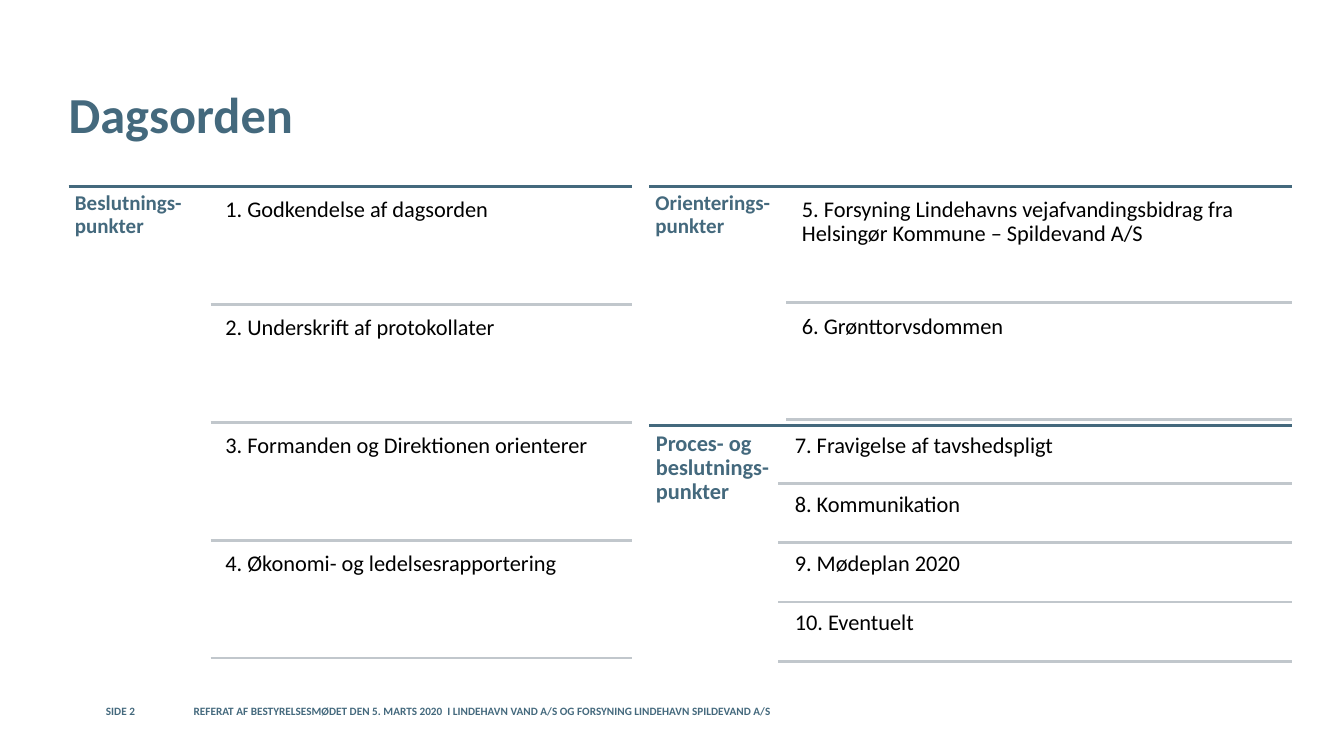
from dataclasses import dataclass

from lxml.etree import SubElement
from pptx import Presentation
from pptx.dml.color import RGBColor
from pptx.enum.text import MSO_ANCHOR
from pptx.oxml.ns import qn
from pptx.slide import Slide
from pptx.util import Cm, Pt


@dataclass(frozen=True)
class Theme:
    font: str = "Calibri"
    accent: RGBColor = RGBColor(0x44, 0x69, 0x7D)
    rule: RGBColor = RGBColor(0xC1, 0xC7, 0xCC)
    body: RGBColor = RGBColor(0, 0, 0)
    title_size: int = 36
    item_size: int = 16
    label_size: int = 15
    footer_size: int = 8
    line_width: int = 2


THEME = Theme()


@dataclass(frozen=True)
class Box:
    left: float
    top: float
    width: float
    height: float


@dataclass(frozen=True)
class Section:
    label: str
    label_box: Box
    label_size: int
    label_inset: float
    right: float
    rule_left: float
    item_left: float
    item_top: float
    item_height: float
    rule_offset: float
    step: float
    items: tuple[str, ...]


SECTIONS = (
    Section("Beslutnings-punkter", Box(1.73, 4.7, 3.58, 12.04), THEME.label_size, 0.16,
            15.93, 5.31, 5.51, 4.83, 2.82, 2.84, 2.97,
            ("1. Godkendelse af dagsorden", "2. Underskrift af protokollater",
             "3. Formanden og Direktionen orienterer",
             "4. Økonomi- og ledelsesrapportering")),
    Section("Orienterings-punkter", Box(16.36, 4.7, 3.43, 6.02), THEME.label_size, 0.16,
            32.56, 19.81, 20.04, 4.83, 2.79, 2.79, 2.95,
            ("5. Forsyning Lindehavns vejafvandingsbidrag fra "
             "Helsingør Kommune – Spildevand A/S", "6. Grønttorvsdommen")),
    Section("Proces- og beslutnings-punkter", Box(16.36, 10.72, 3.25, 6.02), THEME.item_size, 0.17,
            32.56, 19.61, 19.86, 10.77, 1.42, 1.42, 1.49,
            ("7. Fravigelse af tavshedspligt", "8. Kommunikation",
             "9. Mødeplan 2020", "10. Eventuelt")),
)


def add_text(s: Slide, text: str, box: Box, size: int, color: RGBColor, bold: bool = True,
             inset: float = 0, anchor: MSO_ANCHOR = MSO_ANCHOR.TOP, spacing: float = 1.0) -> None:
    sp = s.shapes.add_textbox(Cm(box.left), Cm(box.top), Cm(box.width), Cm(box.height))
    tf = sp.text_frame
    tf.word_wrap = True
    tf.vertical_anchor = anchor
    tf.margin_left = tf.margin_top = tf.margin_right = tf.margin_bottom = Cm(inset)
    tf.text = text
    p = tf.paragraphs[0]
    p.line_spacing = spacing
    font = p.runs[0].font
    font.name, font.size, font.bold = THEME.font, Pt(size), bold
    font.color.rgb = color


def add_rule(s: Slide, left: float, right: float, y: float, color: RGBColor) -> None:
    line = s.shapes.add_connector(1, Cm(left), Cm(y), Cm(right), Cm(y))
    line.line.color.rgb = color
    line.line.width = Pt(THEME.line_width)
    SubElement(line._element.spPr, qn("a:effectLst"))


def add_section(s: Slide, section: Section) -> None:
    label_box = section.label_box
    add_rule(s, label_box.left, section.right, label_box.top, THEME.accent)
    add_text(s, section.label, label_box, section.label_size, THEME.accent,
             inset=section.label_inset, spacing=0.9)
    for i, item in enumerate(section.items):
        top = section.item_top + i * section.step
        box = Box(section.item_left, top, section.right - section.item_left, section.item_height)
        add_text(s, item, box, THEME.item_size, THEME.body, bold=False, inset=0.17, spacing=0.9)
        add_rule(s, section.rule_left, section.right, top + section.rule_offset, THEME.rule)


def main() -> None:
    prs = Presentation()
    prs.slide_width, prs.slide_height = Cm(33.87), Cm(19.05)
    s = prs.slides.add_slide(prs.slide_layouts[6])
    add_text(s, "Dagsorden", Box(1.73, 1.02, 29.21, 3.68), THEME.title_size, THEME.accent,
             anchor=MSO_ANCHOR.MIDDLE)
    for section in SECTIONS:
        add_section(s, section)
    footers = (
        ("REFERAT AF BESTYRELSESMØDET DEN 5. MARTS 2020  I LINDEHAVN VAND A/S "
         "OG FORSYNING LINDEHAVN SPILDEVAND A/S", Box(4.88, 17.6, 15.06, 0.48)),
        ("SIDE 2", Box(2.67, 17.6, 1.73, 0.48)),
    )
    for text, box in footers:
        add_text(s, text, box, THEME.footer_size, THEME.accent, anchor=MSO_ANCHOR.BOTTOM)
    prs.save("out.pptx")


if __name__ == "__main__":
    main()
